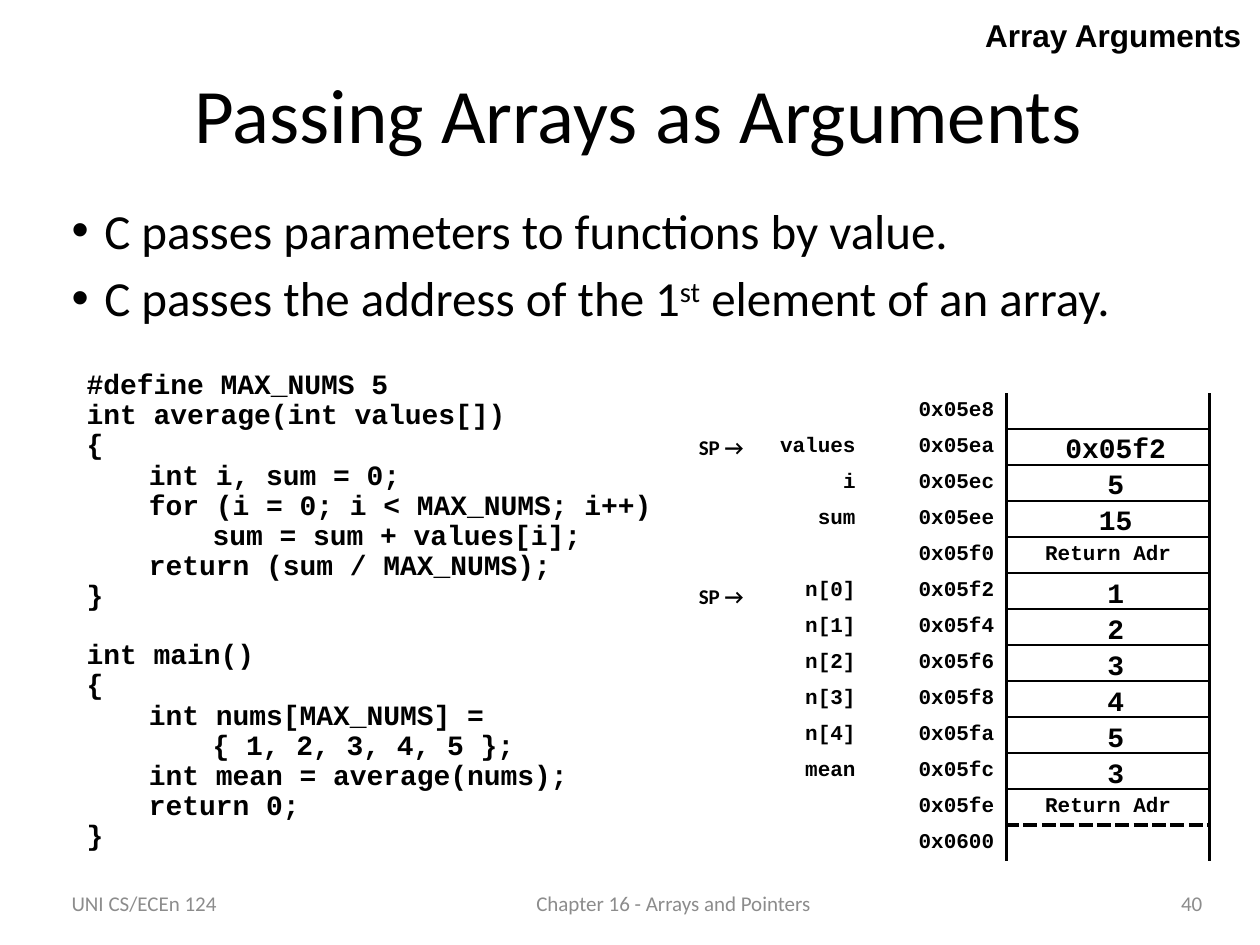
from lxml import etree
from pptx import Presentation
from pptx.dml.color import RGBColor
from pptx.enum.text import MSO_ANCHOR, PP_ALIGN
from pptx.oxml.ns import qn
from pptx.util import Pt

LEFT, CENTER, RIGHT = PP_ALIGN.LEFT, PP_ALIGN.CENTER, PP_ALIGN.RIGHT
TOP, MIDDLE = MSO_ANCHOR.TOP, MSO_ANCHOR.MIDDLE

COLORS = {"text": "000000", "footer": "8C8C8C"}
BODY, HEADER, CODE = "Calibri", "Arial", "Courier New"
NO_STYLE = "{2D5ABB26-0587-4C30-8999-92F81FD0307C}"

# Stack memory: label, address, cell text, value laid over the cell
MEMORY = [
    ("", "0x05e8", "", ""),
    ("values", "0x05ea", "", "0x05f2"),
    ("i", "0x05ec", "", "5"),
    ("sum", "0x05ee", "", "15"),
    ("", "0x05f0", "Return Adr", ""),
    ("n[0]", "0x05f2", "", "1"),
    ("n[1]", "0x05f4", "", "2"),
    ("n[2]", "0x05f6", "", "3"),
    ("n[3]", "0x05f8", "", "4"),
    ("n[4]", "0x05fa", "", "5"),
    ("mean", "0x05fc", "", "3"),
    ("", "0x05fe", "Return Adr", ""),
    ("", "0x0600", "", ""),
]
COLUMN_WIDTHS = (122.4, 79.2, 115.9)
TABLE_LEFT, TABLE_TOP, ROW_HEIGHT = 373.7, 224.6, 20.6
VALUE_CENTER = 637.5

# Code functions as lines of (indent level, text)
AVERAGE = [
    (0, "#define MAX_NUMS 5"),
    (0, "int average(int values[])"),
    (0, "{"),
    (1, "int i, sum = 0;"),
    (1, "for (i = 0; i < MAX_NUMS; i++)"),
    (2, "sum = sum + values[i];"),
    (1, "return (sum / MAX_NUMS);"),
    (0, "}"),
]
MAIN = [
    (0, "int main()"),
    (0, "{"),
    (1, "int nums[MAX_NUMS] ="),
    (2, "{ 1, 2, 3, 4, 5 };"),
    (1, "int mean = average(nums);"),
    (1, "return 0;"),
    (0, "}"),
]
CODE_INDENTS = (0, 35.5, 72)


def style(para, size, font, bold=False, align=LEFT, color="text"):
    para.alignment = align
    para.font.size = Pt(size)
    para.font.name = font
    para.font.bold = bold
    para.font.color.rgb = RGBColor.from_string(COLORS[color])


def set_indent(para, margin, first=0):
    props = para._p.get_or_add_pPr()
    props.set("marL", str(Pt(margin)))
    props.set("indent", str(Pt(first)))
    return props


def add_frame(page, left, top, width, height, anchor=TOP):
    box = page.shapes.add_textbox(Pt(left), Pt(top), Pt(width), Pt(height))
    frame = box.text_frame
    frame.word_wrap = True
    frame.vertical_anchor = anchor
    return frame


def add_label(page, area, text, size, font, anchor=TOP, **looks):
    para = add_frame(page, *area, anchor).paragraphs[0]
    para.text = text
    style(para, size, font, **looks)


def add_bullets(page, area, items):
    """Each item is a list of (text, is superscript) spans."""
    frame = add_frame(page, *area)
    for number, spans in enumerate(items):
        para = frame.add_paragraph() if number else frame.paragraphs[0]
        for text, superscript in spans:
            span = para.add_run()
            span.text = text
            if superscript:
                span.font._element.set("baseline", "30000")
        para.space_before = Pt(5)
        props = set_indent(para, 18.7, -18.7)
        etree.SubElement(props, qn("a:buFont"), typeface=HEADER)
        etree.SubElement(props, qn("a:buChar"), char="•")
        style(para, 28, BODY)


def add_code(page, area, functions):
    frame = add_frame(page, *area)
    for number, lines in enumerate(functions):
        for row, (level, text) in enumerate(lines):
            para = frame.add_paragraph() if number or row else frame.paragraphs[0]
            para.text = text
            para.line_spacing = 0.9
            if number and not row:
                para.space_before = Pt(16.3)
            set_indent(para, CODE_INDENTS[level])
            style(para, 16, CODE, bold=True)


def add_border(cell, side, width, dash="solid"):
    line = etree.SubElement(cell._tc.get_or_add_tcPr(), qn(f"a:ln{side}"), w=str(Pt(width)))
    fill = etree.SubElement(line, qn("a:solidFill"))
    etree.SubElement(fill, qn("a:srgbClr"), val=COLORS["text"])
    etree.SubElement(line, qn("a:prstDash"), val=dash)


def fill_cell(cell, text, align):
    cell.margin_top = cell.margin_bottom = Pt(0.7)
    cell.vertical_anchor = MIDDLE
    para = cell.text_frame.paragraphs[0]
    para.text = text
    style(para, 12, CODE, bold=True, align=align)
    if not text:
        etree.SubElement(para._p, qn("a:endParaRPr"), sz="1200")


def add_memory_table(page):
    count = len(MEMORY)
    frame = page.shapes.add_table(
        count, len(COLUMN_WIDTHS), Pt(TABLE_LEFT), Pt(TABLE_TOP),
        Pt(sum(COLUMN_WIDTHS)), Pt(count * ROW_HEIGHT))
    table = frame.table
    table.first_row = table.horz_banding = False
    table._tbl.tblPr.find(qn("a:tableStyleId")).text = NO_STYLE
    for column, width in zip(table.columns, COLUMN_WIDTHS):
        column.width = Pt(width)

    # The line above the last row is dashed, the others are thin
    rules = [(1, "solid")] * (count - 2) + [(2.25, "dash")]
    for number, texts in enumerate(MEMORY):
        table.rows[number].height = Pt(ROW_HEIGHT)
        cells = [table.cell(number, column) for column in range(3)]
        for cell, text, align in zip(cells, texts, (RIGHT, RIGHT, CENTER)):
            fill_cell(cell, text, align)
        add_border(cells[1], "R", 2.25)
        add_border(cells[2], "L", 2.25)
        add_border(cells[2], "R", 2.25)
        if number:
            add_border(cells[2], "T", *rules[number - 1])
        if number < count - 1:
            add_border(cells[2], "B", *rules[number])
        for cell in cells:
            cell.fill.background()


def add_values(page):
    for number, (_, _, _, value) in enumerate(MEMORY):
        if value:
            width = 14.8 + 9.6 * len(value)
            top = TABLE_TOP - 2.5 + number * ROW_HEIGHT
            add_label(page, (VALUE_CENTER - width / 2, top, width, 26.6),
                      value, 16, CODE, bold=True, align=CENTER)


def main():
    deck = Presentation()
    deck.slide_width, deck.slide_height = Pt(720), Pt(540)
    page = deck.slides.add_slide(deck.slide_layouts[6])

    # Footer
    for left, width, text, align in (
            (33.8, 149.8, "UNI CS/ECEn 124", LEFT),
            (200.2, 369.4, "Chapter 16 - Arrays and Pointers", CENTER),
            (544.3, 149.8, "40", RIGHT)):
        add_label(page, (left, 498.2, width, 36), text, 12, BODY,
                  anchor=MIDDLE, align=align, color="footer")

    # Headings and main points
    add_label(page, (58.3, 34.6, 613.4, 68.4), "Passing Arrays as Arguments",
              44, BODY, align=CENTER)
    add_bullets(page, (33.8, 110.9, 651.6, 102.2), [
        [("C passes parameters to functions by value.", False)],
        [("C passes the address of the 1", False), ("st", True),
         (" element of an array.", False)],
    ])
    add_label(page, (427, 5.8, 289.4, 28.8), "Array Arguments", 18, HEADER,
              bold=True, align=RIGHT)

    # Code and stack memory
    add_code(page, (42.5, 208.1, 364.3, 290.9), (AVERAGE, MAIN))
    add_memory_table(page)
    add_values(page)

    # Stack pointer before and during the call
    for top in (244.8, 329.8):
        add_label(page, (374.4, top, 57.6, 21.6), "SP →", 12, BODY,
                  bold=True, align=RIGHT)

    deck.save("out.pptx")


if __name__ == "__main__":
    main()
